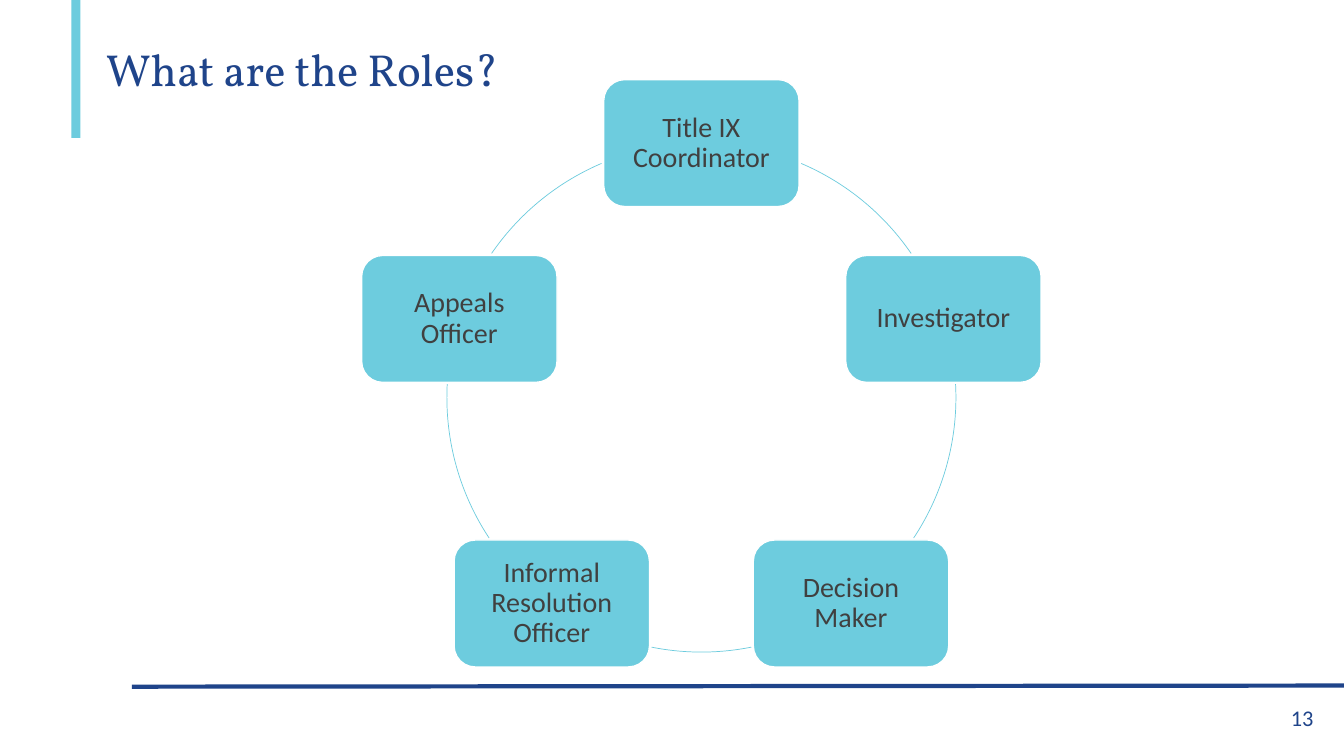
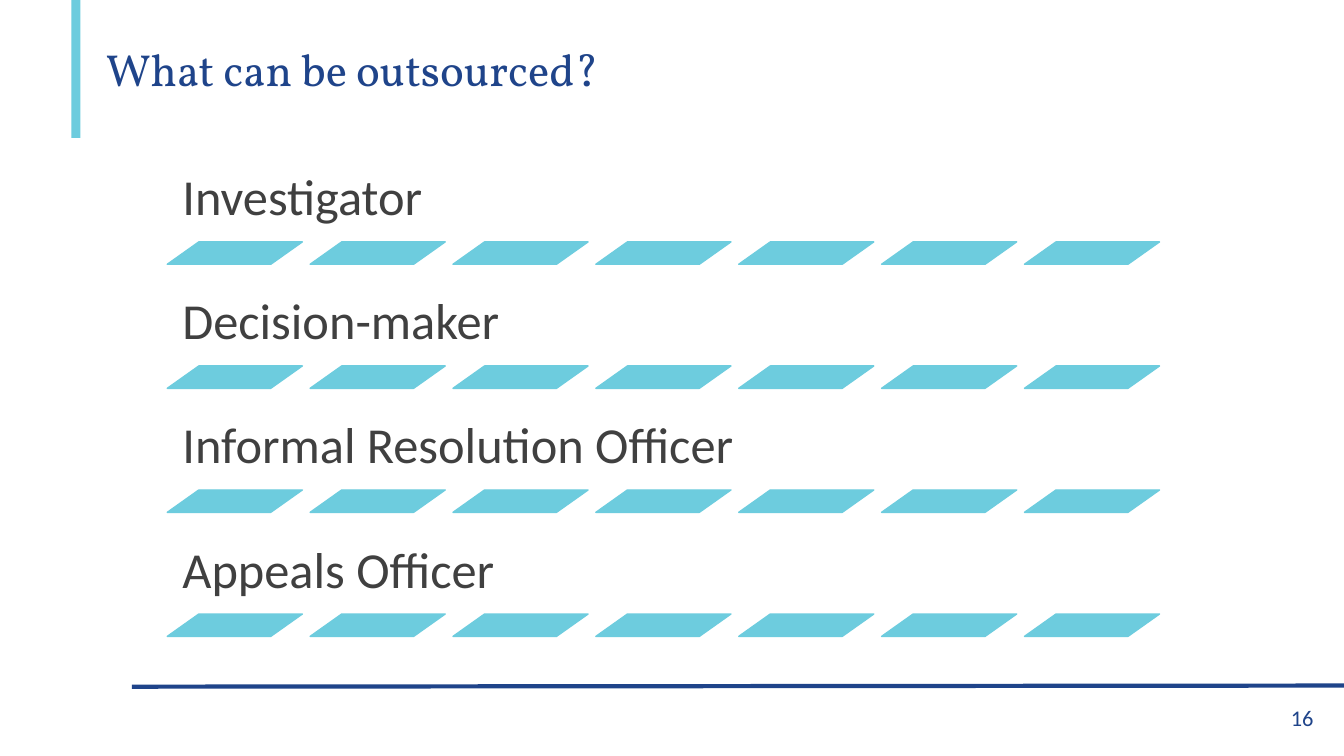
from dataclasses import dataclass
from itertools import count
from math import cos, radians, sin

from lxml.etree import SubElement
from pptx import Presentation
from pptx.dml.color import RGBColor
from pptx.enum.shapes import MSO_CONNECTOR, MSO_SHAPE
from pptx.enum.text import MSO_ANCHOR, MSO_AUTO_SIZE, PP_ALIGN
from pptx.oxml.ns import qn
from pptx.util import Pt


@dataclass(frozen=True)
class Theme:
    navy: RGBColor = RGBColor.from_string("1F448A")
    aqua: RGBColor = RGBColor.from_string("6DCCDE")
    ink: RGBColor = RGBColor.from_string("404040")
    white: RGBColor = RGBColor.from_string("FFFFFF")
    title_font: str = "Vollkorn"
    body_font: str = "Calibri"
    title_size: int = 32
    row_size: int = 36
    role_size: int = 20
    number_size: int = 16


THEME = Theme()
SLIDE_SIZE = (960, 540)

ROLES_TITLE, ROLES_PAGE = "What are the Roles?", 13
ROLES = ["Title IX Coordinator", "Investigator", "Decision Maker",
         "Informal Resolution Officer", "Appeals Officer"]

OUTSOURCED_TITLE, OUTSOURCED_PAGE = "What can be outsourced?", 16
OUTSOURCED = ["Investigator", "Decision-maker",
              "Informal Resolution Officer", "Appeals Officer"]

# Ring of roles: centre, radius, box size and the gap between box and arc
RING_X, RING_Y, RING_RADIUS = 501, 284, 181.8
ROLE_W, ROLE_H, ARC_GAP = 139.6, 90.7, 1.3

# Outsourced rows: text above a strip of slanted dashes
ROW_LEFT, ROW_TOP, ROW_STEP = 119.5, 107.3, 88.6
ROW_W, ROW_TEXT_H = 723, 65.5
DASHES, DASH_W, DASH_H, DASH_STEP, DASH_SLANT = 7, 96.5, 16, 102.05, 1.41


def points(*lengths):
    return [Pt(length) for length in lengths]


def write(frame, text, size, color, font=THEME.body_font, align=PP_ALIGN.LEFT, spacing=0.9):
    frame.text = text
    paragraph = frame.paragraphs[0]
    paragraph.alignment = align
    paragraph.line_spacing = spacing
    run_font = paragraph.runs[0].font
    run_font.name, run_font.size = font, Pt(size)
    run_font.color.rgb = color


def set_frame(frame, anchor, left, top, right, bottom):
    frame.word_wrap = True
    frame.auto_size = MSO_AUTO_SIZE.NONE
    frame.vertical_anchor = anchor
    frame.margin_left, frame.margin_top, frame.margin_right, frame.margin_bottom = points(
        left, top, right, bottom)


def add_filled(slide, preset, box, line=None):
    shape = slide.shapes.add_shape(preset, *points(*box))
    shape.shadow.inherit = False
    shape.fill.solid()
    shape.fill.fore_color.rgb = THEME.aqua
    if line is None:
        shape.line.fill.background()
    else:
        shape.line.color.rgb = line
        shape.line.width = Pt(1)
    return shape


def prepare_layout(layout):
    for placeholder in list(layout.placeholders):
        if placeholder.placeholder_format.idx != 0:
            placeholder.element.getparent().remove(placeholder.element)
    title = layout.placeholders[0]
    title.left, title.top, title.width, title.height = points(68.4, 0, 825.8, 98.6)
    set_frame(title.text_frame, MSO_ANCHOR.MIDDLE, 7.2, 7.2, 7.2, 3.6)


def add_layout_bands(slide):
    """Draw the bands on a slide, then move them to its layout for all slides."""
    title_bar = add_filled(slide, MSO_SHAPE.RECTANGLE, (51, 0, 6.5, 98.6))
    footer_rule = slide.shapes.add_connector(
        MSO_CONNECTOR.STRAIGHT, *points(94.3, 490.5, 960, 489.7))
    footer_rule.line.color.rgb = THEME.navy
    footer_rule.line.width = Pt(3)
    SubElement(footer_rule.element.spPr, qn("a:effectLst"))
    for band in (footer_rule, title_bar):
        slide.slide_layout.shapes.element.append(band.element)


def fill_frame(slide, title, page):
    write(slide.shapes.title.text_frame, title, THEME.title_size, THEME.navy, THEME.title_font)
    number = slide.shapes.add_textbox(*points(905, 499.7, 40.3, 28.8)).text_frame
    set_frame(number, MSO_ANCHOR.TOP, 7.2, 3.6, 7.2, 3.6)
    write(number, str(page), THEME.number_size, THEME.navy, align=PP_ALIGN.RIGHT, spacing=1)


def ring_point(angle):
    """Point on the ring, angle in degrees clockwise from the right."""
    return (RING_X + RING_RADIUS * cos(radians(angle)),
            RING_Y + RING_RADIUS * sin(radians(angle)))


def clear_angle(center_angle, direction):
    """First angle along the ring that lies outside the role box."""
    x, y = ring_point(center_angle)
    for step in count(1):
        angle = center_angle + direction * step / 10
        arc_x, arc_y = ring_point(angle)
        if abs(arc_x - x) > ROLE_W / 2 + ARC_GAP or abs(arc_y - y) > ROLE_H / 2 + ARC_GAP:
            return angle


def add_arc(slide, start, end):
    arc = slide.shapes.add_shape(MSO_SHAPE.ARC, *points(
        RING_X - RING_RADIUS, RING_Y - RING_RADIUS, 2 * RING_RADIUS, 2 * RING_RADIUS))
    arc.shadow.inherit = False
    arc.fill.background()
    arc.line.color.rgb = THEME.aqua
    arc.line.width = Pt(0.5)
    for index, angle in enumerate((start, end)):
        arc.adjustments[index] = angle % 360 * 0.6


def add_role_ring(slide):
    turn = 360 / len(ROLES)
    for index, role in enumerate(ROLES):
        angle = index * turn - 90
        x, y = ring_point(angle)
        box = add_filled(slide, MSO_SHAPE.ROUNDED_RECTANGLE,
                         (x - ROLE_W / 2, y - ROLE_H / 2, ROLE_W, ROLE_H), THEME.white)
        set_frame(box.text_frame, MSO_ANCHOR.MIDDLE, 10, 10, 10, 10)
        write(box.text_frame, role, THEME.role_size, THEME.ink, align=PP_ALIGN.CENTER)
        add_arc(slide, clear_angle(angle, 1), clear_angle(angle + turn, -1))


def add_outsourced_rows(slide):
    for row, role in enumerate(OUTSOURCED):
        top = ROW_TOP + row * ROW_STEP
        label = slide.shapes.add_textbox(*points(ROW_LEFT, top, ROW_W, ROW_TEXT_H)).text_frame
        set_frame(label, MSO_ANCHOR.BOTTOM, 10.8, 10.8, 10.8, 10.8)
        write(label, role, THEME.row_size, THEME.ink)
        for column in range(DASHES):
            dash = add_filled(slide, MSO_SHAPE.PARALLELOGRAM,
                              (ROW_LEFT + column * DASH_STEP, top + ROW_TEXT_H, DASH_W, DASH_H),
                              THEME.aqua)
            dash.adjustments[0] = DASH_SLANT


def main():
    deck = Presentation()
    deck.slide_width, deck.slide_height = points(*SLIDE_SIZE)
    layout = deck.slide_layouts[5]
    prepare_layout(layout)

    roles = deck.slides.add_slide(layout)
    add_layout_bands(roles)
    fill_frame(roles, ROLES_TITLE, ROLES_PAGE)
    add_role_ring(roles)

    outsourced = deck.slides.add_slide(layout)
    fill_frame(outsourced, OUTSOURCED_TITLE, OUTSOURCED_PAGE)
    add_outsourced_rows(outsourced)

    deck.save("out.pptx")


if __name__ == "__main__":
    main()
